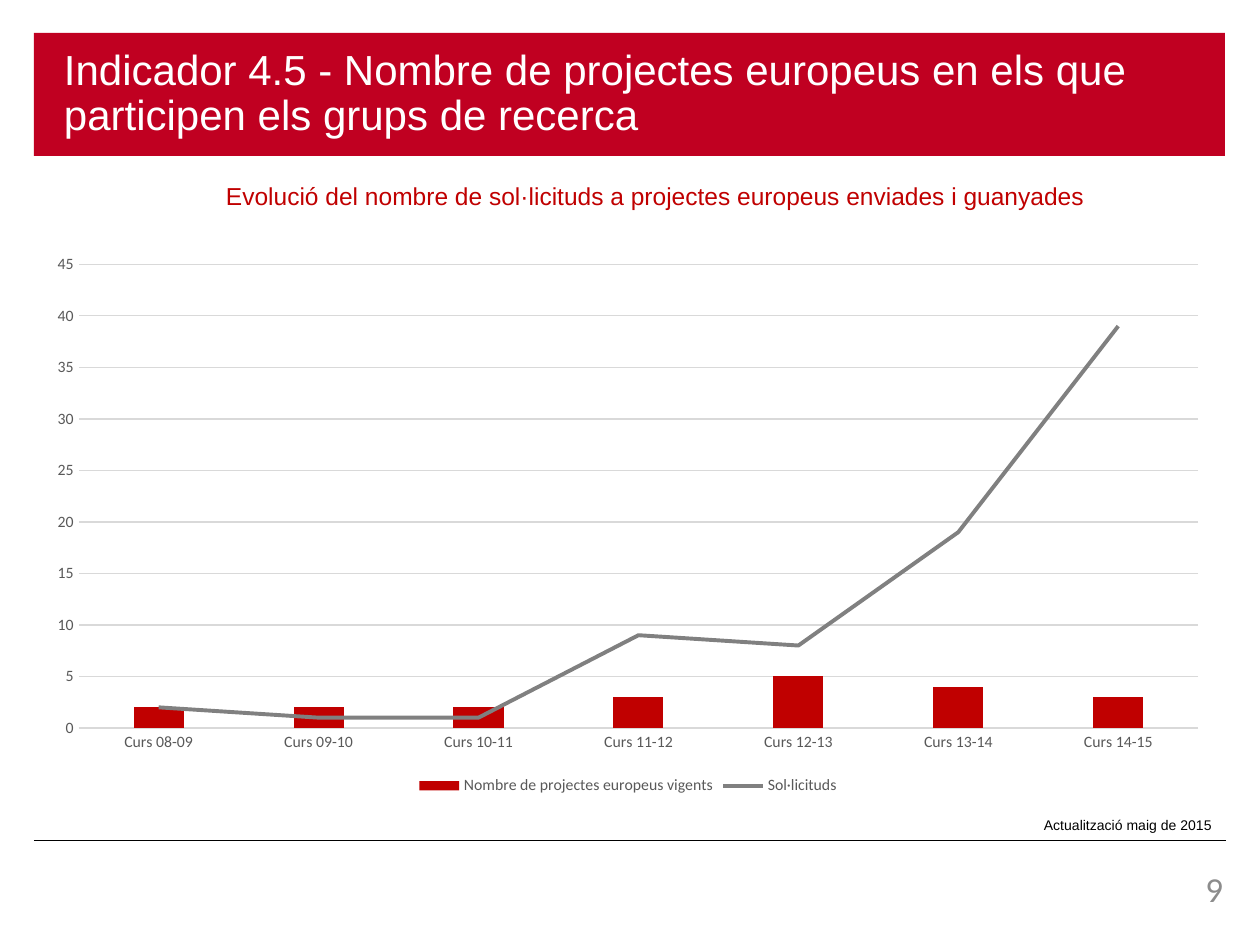
from lxml import etree
from pptx import Presentation
from pptx import util as u
from pptx.chart.data import CategoryChartData
from pptx.dml.color import RGBColor
from pptx.enum import chart as ch, shapes, text
from pptx.oxml import parse_xml
from pptx.oxml.ns import nsdecls, qn

SCALE = 914400 / 126
COLORS = {
    "banner": "C00021",
    "red": "C00000",
    "white": "FFFFFF",
    "black": "000000",
    "number": "8C8C8C",
    "label": "595959",
    "grid": "D9D9D9",
    "line": "808080",
}
COURSES = [f"Curs {year:02d}-{year + 1:02d}" for year in range(8, 15)]
PROJECTS = ("Nombre de projectes europeus vigents", [2, 2, 2, 3, 5, 4, 3])
REQUESTS = ("Sol·licituds", [2, 1, 1, 9, 8, 19, 39])


def px(n):
    return u.Emu(round(n * SCALE))


def color(name):
    return RGBColor.from_string(COLORS[name])


class SlideBuilder:
    def __init__(self, prs):
        self.s = prs.slides.add_slide(prs.slide_layouts[5])

    def font(self, font, size, name, family="Arial"):
        font.size = u.Pt(size)
        font.name = family
        font.bold = False
        font.color.rgb = color(name)

    def stroke(self, line, name, width):
        line.color.rgb = color(name)
        line.width = u.Pt(width)

    def margins(self, tf, left, top, right, bottom):
        tf.margin_left, tf.margin_top = px(left), px(top)
        tf.margin_right, tf.margin_bottom = px(right), px(bottom)

    def title(self, box, words):
        sp = self.s.shapes.title
        sp.left, sp.top, sp.width, sp.height = map(px, box)
        sp.fill.solid()
        sp.fill.fore_color.rgb = color("banner")
        tf = sp.text_frame
        tf.text = words
        tf.word_wrap = True
        tf.auto_size = text.MSO_AUTO_SIZE.NONE
        tf.vertical_anchor = text.MSO_ANCHOR.MIDDLE
        self.margins(tf, 30, 6, 13, 6)
        p = tf.paragraphs[0]
        p.alignment = text.PP_ALIGN.LEFT
        p.line_spacing = 0.9
        self.font(p.runs[0].font, 24, "white")

    def label(self, box, words, size, name, align="LEFT", family="Arial", inset=(13, 6)):
        sp = self.s.shapes.add_textbox(*map(px, box))
        tf = sp.text_frame
        tf.text = words
        tf.word_wrap = True
        self.margins(tf, *inset, *inset)
        p = tf.paragraphs[0]
        p.alignment = text.PP_ALIGN[align]
        self.font(p.runs[0].font, size, name, family)

    def rule(self, left, right, y):
        line = self.s.shapes.add_connector(
            shapes.MSO_CONNECTOR.STRAIGHT, px(left), px(y), px(right), px(y))
        self.stroke(line.line, "black", 0.5)
        etree.SubElement(line._element.spPr, qn("a:effectLst"))

    def combo_chart(self, box, categories, columns, line):
        data = CategoryChartData()
        data.categories = categories
        for name, values in (columns, line):
            data.add_series(name, values)
        chart = self.s.shapes.add_chart(
            ch.XL_CHART_TYPE.COLUMN_CLUSTERED, *map(px, box), data).chart
        self.font(chart.font, 10, "black", "Calibri")
        chart.has_title = False
        chart.has_legend = True
        chart.legend.position = ch.XL_LEGEND_POSITION.BOTTOM
        chart.legend.include_in_layout = False
        self.font(chart.legend.font, 9, "label", "Calibri")

        for axis in (chart.category_axis, chart.value_axis):
            axis.major_tick_mark = axis.minor_tick_mark = ch.XL_TICK_MARK.NONE
            self.font(axis.tick_labels.font, 9, "label", "Calibri")
        self.stroke(chart.category_axis.format.line, "grid", 0.75)
        axis = chart.value_axis
        axis.minimum_scale, axis.maximum_scale, axis.major_unit = 0, 45, 5
        axis.format.line.fill.background()
        self.stroke(axis.major_gridlines.format.line, "grid", 0.75)

        plot = chart.plots[0]
        plot.vary_by_categories = False
        plot.gap_width, plot.overlap = 219, -27
        bars, trend = plot.series
        bars.format.fill.solid()
        bars.format.fill.fore_color.rgb = color("red")
        self.stroke(trend.format.line, "line", 2.25)
        self.move_to_line_plot(plot, trend)

    def move_to_line_plot(self, plot, series):
        bar_plot, ser = plot._element, series._element
        line_plot = parse_xml(
            f'<c:lineChart {nsdecls("c")}><c:grouping val="standard"/>'
            '<c:varyColors val="0"/><c:marker val="1"/></c:lineChart>')
        for flag in ser.findall(qn("c:invertIfNegative")):
            ser.remove(flag)
        marker = parse_xml(f'<c:marker {nsdecls("c")}><c:symbol val="none"/></c:marker>')
        ser.find(qn("c:spPr")).addnext(marker)
        etree.SubElement(ser, qn("c:smooth")).set("val", "0")
        line_plot.insert(2, ser)
        for axis_id in bar_plot.findall(qn("c:axId")):
            etree.SubElement(line_plot, qn("c:axId")).set("val", axis_id.get("val"))
        bar_plot.addnext(line_plot)


def main():
    prs = Presentation()
    prs.slide_width, prs.slide_height = px(1260), px(945)
    slide = SlideBuilder(prs)
    slide.rule(34, 1226, 840)
    slide.title((34, 33, 1191, 123),
                "Indicador 4.5 - Nombre de projectes europeus en els que "
                "participen els grups de recerca")
    slide.label((213, 175, 921, 43),
                "Evolució del nombre de sol·licituds a projectes europeus enviades i guanyades",
                14, "red")
    slide.label((1017, 810, 208, 30), "Actualització maig de 2015", 8, "black", "RIGHT")
    slide.label((1131, 868, 92, 50), "9", 20, "number", "RIGHT", "Calibri", (0, 0))
    slide.combo_chart((34, 244, 1188, 556), COURSES, PROJECTS, REQUESTS)
    prs.save("out.pptx")


if __name__ == "__main__":
    main()
